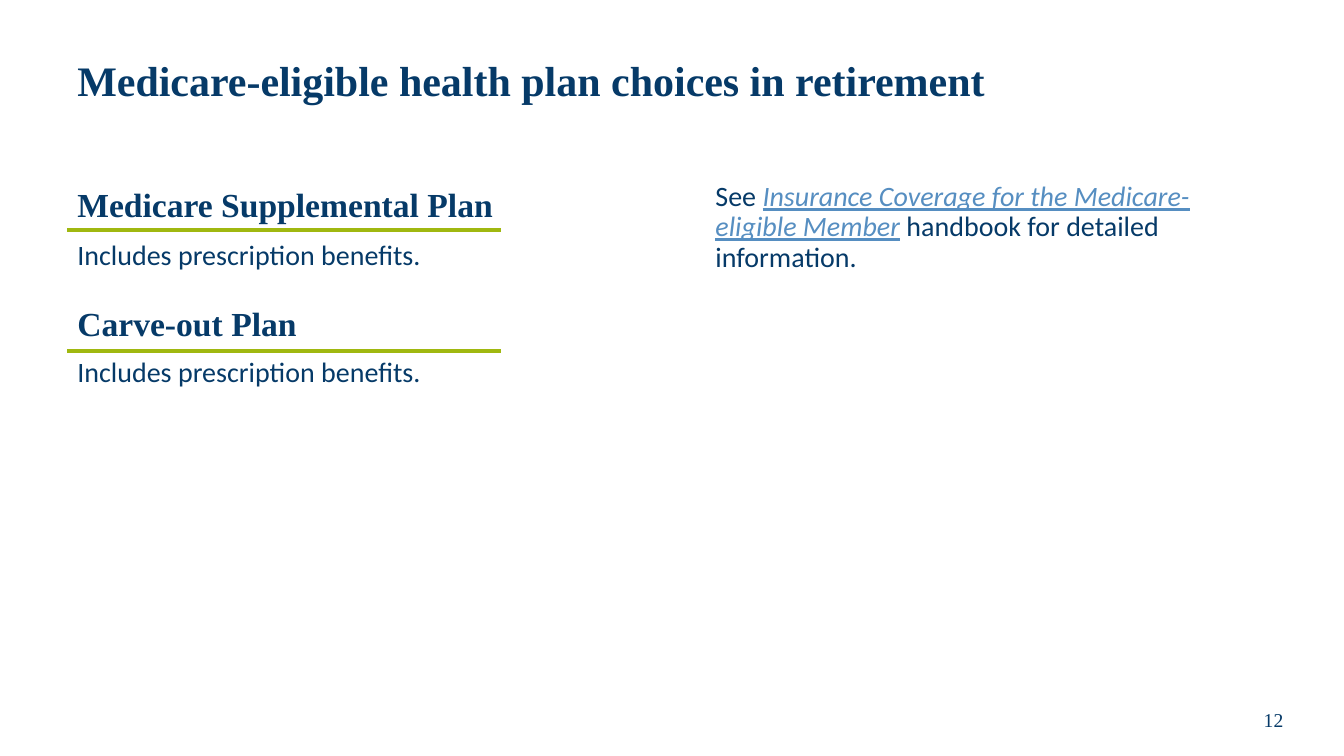
from dataclasses import dataclass

import pptx
import pptx.dml.color
import pptx.enum.shapes
import pptx.enum.text
import pptx.oxml
import pptx.oxml.ns
import pptx.slide
import pptx.util
from pptx.util import Cm

NAVY = pptx.dml.color.RGBColor(0x06, 0x3A, 0x68)
LINK_BLUE = pptx.dml.color.RGBColor(0x56, 0x8E, 0xC1)
GREEN = pptx.dml.color.RGBColor(0xA0, 0xB8, 0x10)
SERIF = "Times New Roman"
SANS = "Calibri"
LEFT = 1.7
RULE_WIDTH = 10.92


@dataclass(frozen=True)
class Run:
    text: str
    linked: bool = False


@dataclass(frozen=True)
class Plan:
    name: str
    benefits: str
    name_top: float
    rule_y: float
    benefits_top: float


PLANS = [
    Plan("Medicare Supplemental Plan", "Includes prescription benefits.", 4.5, 5.79, 5.87),
    Plan("Carve-out Plan", "Includes prescription benefits.", 7.52, 8.84, 8.81),
]
HANDBOOK_NOTE = [
    Run("See "),
    Run("Insurance Coverage for the Medicare-eligible Member", linked=True),
    Run(" handbook for detailed information."),
]


def add_text(
    slide: pptx.slide.Slide,
    runs: list[Run],
    left: float,
    top: float,
    width: float,
    height: float,
    *,
    size: float = 20,
    font: str = SANS,
    bold: bool = False,
    line_spacing: float = 1.0,
    middle: bool = False,
    centred: bool = False,
) -> None:
    """Add a one-paragraph text box; lengths are in centimetres."""
    frame = slide.shapes.add_textbox(Cm(left), Cm(top), Cm(width), Cm(height)).text_frame
    frame.word_wrap = True
    anchors = pptx.enum.text.MSO_ANCHOR
    frame.vertical_anchor = anchors.MIDDLE if middle else anchors.TOP
    paragraph = frame.paragraphs[0]
    paragraph.line_spacing = line_spacing
    aligns = pptx.enum.text.PP_ALIGN
    paragraph.alignment = aligns.CENTER if centred else aligns.LEFT
    for part in runs:
        run = paragraph.add_run()
        run.text = part.text
        run.font.name = font
        run.font.size = pptx.util.Pt(size)
        run.font.bold = bold
        run.font.italic = part.linked
        run.font.underline = part.linked
        run.font.color.rgb = LINK_BLUE if part.linked else NAVY


def add_rule(slide: pptx.slide.Slide, y: float) -> None:
    rule = slide.shapes.add_connector(
        pptx.enum.shapes.MSO_CONNECTOR.STRAIGHT,
        Cm(LEFT), Cm(y), Cm(LEFT + RULE_WIDTH), Cm(y),
    )
    rule.line.color.rgb = GREEN
    rule.line.width = pptx.util.Pt(3)
    effects = pptx.oxml.parse_xml(f"<a:effectLst {pptx.oxml.ns.nsdecls('a')}/>")
    rule._element.spPr.append(effects)


def add_plan(slide: pptx.slide.Slide, plan: Plan) -> None:
    add_text(slide, [Run(plan.name)], LEFT, plan.name_top, 11.18, 1.27,
             size=24, font=SERIF, bold=True)
    add_rule(slide, plan.rule_y)
    add_text(slide, [Run(plan.benefits)], LEFT, plan.benefits_top, RULE_WIDTH, 1.12)


def main() -> None:
    deck = pptx.Presentation()
    deck.slide_width, deck.slide_height = Cm(33.87), Cm(19.05)
    slide = deck.slides.add_slide(deck.slide_layouts[6])
    add_text(slide, [Run("Medicare-eligible health plan choices in retirement")],
             LEFT, 0.64, 30.48, 2.92,
             size=30, font=SERIF, bold=True, line_spacing=0.9, middle=True)
    for plan in PLANS:
        add_plan(slide, plan)
    add_text(slide, HANDBOOK_NOTE, 17.78, 4.47, 14.4, 13.0, line_spacing=0.9)
    add_text(slide, [Run("12")], 30.61, 17.5, 2.97, 1.27,
             size=14, font=SERIF, middle=True, centred=True)
    deck.save("out.pptx")


if __name__ == "__main__":
    main()
